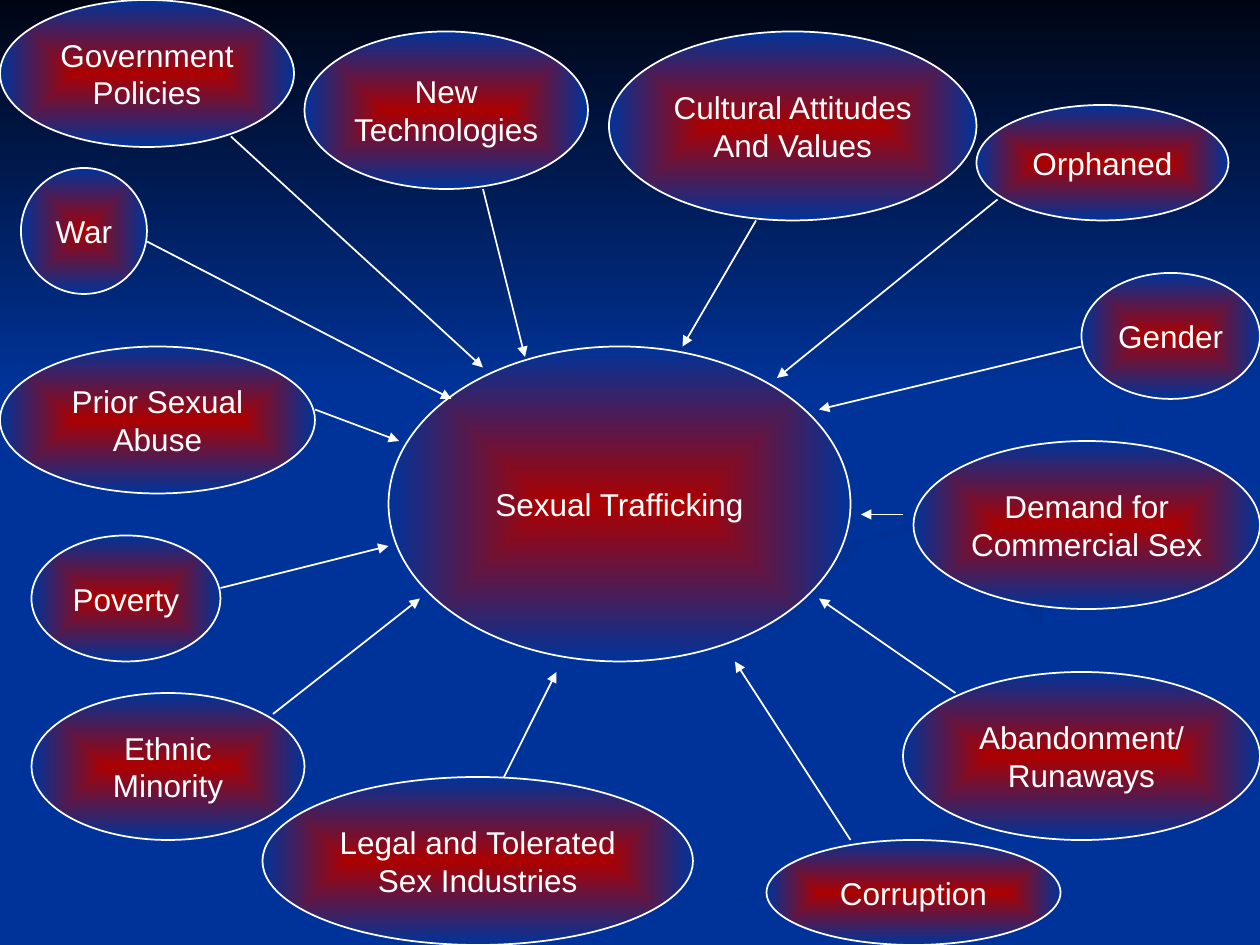
"""Build a slide of the factors that feed sexual trafficking."""
from lxml import etree
from pptx import Presentation
from pptx.dml.color import RGBColor
from pptx.enum import shapes as kinds, text as words
from pptx.oxml import ns
from pptx.util import Pt

WHITE = RGBColor(0xFF, 0xFF, 0xFF)
RED = RGBColor(0xAC, 0x00, 0x00)
BLUE = RGBColor(0x00, 0x33, 0x99)
NIGHT = RGBColor(0x00, 0x05, 0x14)
SHADE = RGBColor(0x00, 0x2F, 0x8E)

deck = Presentation()
deck.slide_width, deck.slide_height = Pt(720), Pt(540)
slide = deck.slides.add_slide(deck.slide_layouts[6])
slide.background.fill.solid()
slide.background.fill.fore_color.rgb = BLUE


def fade(shape, first, last, angle=None):
    """Fill with a linear fade, or from the centre when no angle is given."""
    shape.shadow.inherit = False
    fill = shape.fill
    fill.gradient()
    for stop, tone, place in zip(fill.gradient_stops, (first, last), (0, 1)):
        stop.color.rgb = tone
        stop.position = place
    if angle is not None:
        fill.gradient_angle = angle
        shape.line.fill.background()
        return
    line = shape._element.spPr.find(".//" + ns.qn("a:lin"))
    ray = etree.Element(ns.qn("a:path"), path="shape")
    etree.SubElement(ray, ns.qn("a:fillToRect"), dict.fromkeys("ltrb", "50000"))
    line.getparent().replace(line, ray)


def bubble(label, box, size=18, font="Arial", color=WHITE):
    """Add an oval with a centred label."""
    oval = slide.shapes.add_shape(kinds.MSO_SHAPE.OVAL, *map(Pt, box))
    fade(oval, RED, BLUE)
    oval.line.color.rgb = color
    oval.line.width = Pt(1)
    frame = oval.text_frame
    frame.text = label
    frame.word_wrap = False
    frame.vertical_anchor = words.MSO_ANCHOR.MIDDLE
    for para in frame.paragraphs:
        para.alignment = words.PP_ALIGN.CENTER
        para.font.size = Pt(size)
        para.font.name = font
        para.font.color.rgb = color


swirls = [
    (270, [(362, 539), (411, 539), (565, 476), (719, 438), (719, 418), (501, 482)]),
    (315, [(562, 331), (595, 357), (596, 326), (719, 302), (719, 289), (592, 312)]),
    (315, [(492, 310), (616, 282), (643, 241), (549, 168), (640, 241), (606, 272),
           (415, 333), (448, 360)]),
]
for angle, spots in swirls:
    pen = slide.shapes.build_freeform(*spots[0], scale=Pt(1))
    pen.add_line_segments(spots[1:], close=True)
    fade(pen.convert_to_shape(), SHADE, BLUE, angle)

sky = slide.shapes.add_shape(kinds.MSO_SHAPE.RECTANGLE, 0, 0, deck.slide_width, Pt(222))
fade(sky, NIGHT, BLUE, 270)

causes = [
    ("Sexual Trafficking", (222, 198, 264, 180)),
    ("War", (12, 96, 72, 72)),
    ("New\nTechnologies", (174, 18, 162, 90)),
    ("Cultural Attitudes\nAnd Values", (348, 18, 210, 108)),
    ("Poverty", (18, 306, 108, 72)),
    ("Ethnic\nMinority", (18, 396, 156, 84)),
    ("Orphaned", (558, 60, 144, 66)),
    ("Abandonment/\nRunaways", (516, 384, 204, 96)),
    ("Legal and Tolerated\nSex Industries", (150, 444, 246, 96)),
    ("Corruption", (438, 480, 168, 60)),
    ("Prior Sexual\nAbuse", (0, 198, 180, 84)),
    ("Gender", (618, 156, 102, 72)),
    ("Demand for\nCommercial Sex", (522, 252, 198, 96)),
    ("Government\nPolicies", (0, 0, 168, 84)),
]
for label, box in causes:
    bubble(label, box)

arrows = [
    (276, 108, 300, 204), (432, 126, 390, 198), (570, 114, 444, 216),
    (618, 198, 468, 234), (516, 294, 492, 294), (84, 138, 258, 228),
    (180, 234, 228, 252), (126, 336, 222, 312), (156, 408, 240, 342),
    (288, 444, 318, 384), (486, 480, 420, 378), (546, 396, 468, 342),
    (132, 78, 276, 210),
]
for ends in arrows:
    arrow = slide.shapes.add_connector(kinds.MSO_CONNECTOR.STRAIGHT, *map(Pt, ends))
    arrow.line.color.rgb = WHITE
    arrow.line.width = Pt(1)
    etree.SubElement(arrow.line._get_or_add_ln(), ns.qn("a:tailEnd"), type="triangle")
    etree.SubElement(arrow._element.spPr, ns.qn("a:effectLst"))

deck.save("out.pptx")
